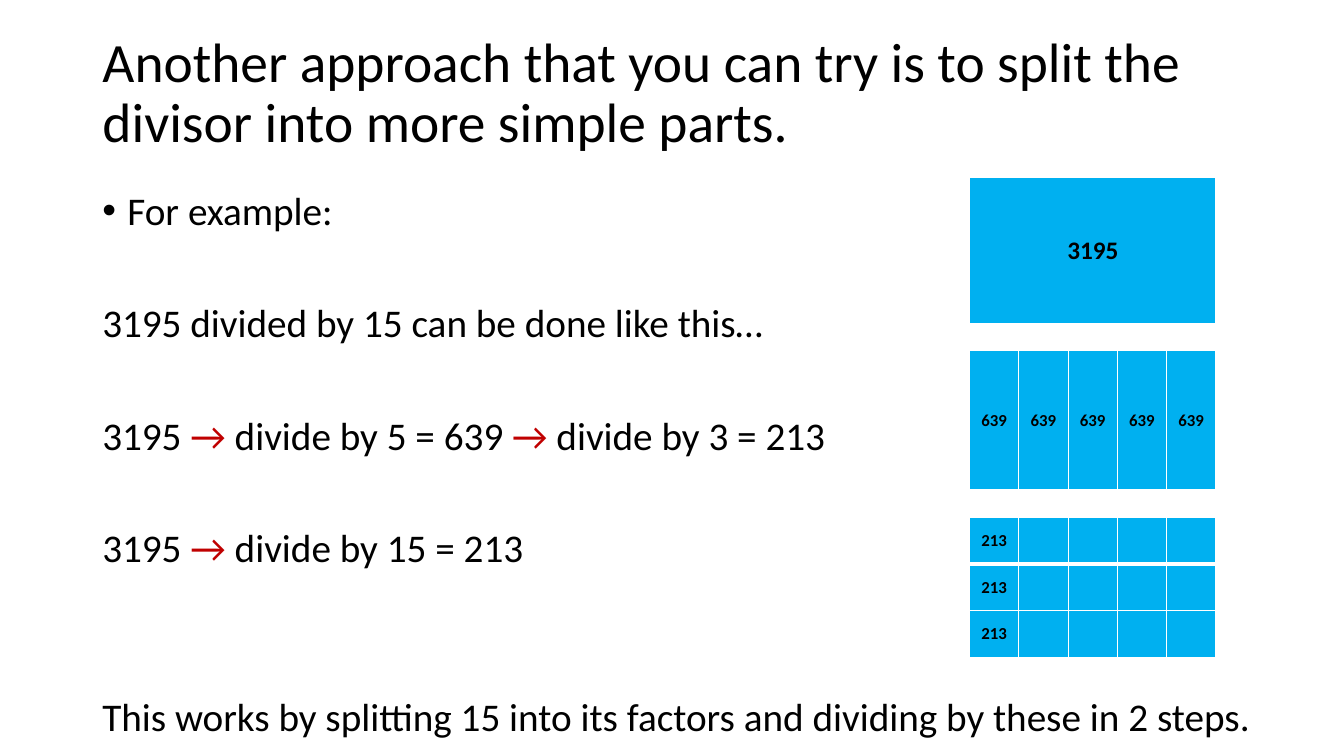
from lxml.etree import SubElement
from pptx import Presentation
from pptx.dml.color import RGBColor
from pptx.enum.text import MSO_ANCHOR, MSO_AUTO_SIZE, PP_ALIGN
from pptx.oxml.ns import qn
from pptx.util import Pt

# Content
FONT = "Calibri"
HUES = {"ink": "000000", "red": "C00000", "blue": "00B0F0", "white": "FFFFFF"}
TITLE = ("Another approach that you can try is to split the divisor "
         "into more simple parts.")
# Each line: space before, bullet, runs of (text, colour)
LINES = [
    (10, True, [("For example:", "ink")]),
    (50, False, [("3195 divided by 15 can be done like this…", "ink")]),
    (50, False, [("3195 ", "ink"), ("→", "red"), (" divide by 5 = 639", "ink"),
                 (" → ", "red"), ("divide by 3 = 213", "ink")]),
    (50, False, [("3195 ", "ink"), ("→", "red"), (" divide by 15 = 213", "ink")]),
    (90.5, False, [("This works by splitting 15 into its factors "
                    "and dividing by these in 2 steps.", "ink")]),
]
# Each grid: top, height, text size, rows
GRIDS = [
    (126.8, 105, 18, [["3195"]]),
    (250.6, 100, 12, [["639"] * 5]),
    (369.4, 100.2, 12, [["213"] + [""] * 4] * 3),
]
GRID_X, GRID_W = 692.6, 176


def color(name):
    return RGBColor.from_string(HUES[name])


def write(para, text, size=28, hue="ink", bold=False, align=PP_ALIGN.LEFT):
    para.alignment = align
    run = para.add_run()
    run.text = text
    font = run.font
    font.name, font.size, font.bold = FONT, Pt(size), bold
    font.color.rgb = color(hue)


def bullet(para):
    props = para._p.get_or_add_pPr()
    props.set("marL", str(Pt(18)))
    props.set("indent", str(Pt(-18)))
    SubElement(props, qn("a:buFont"), typeface="Arial")
    SubElement(props, qn("a:buChar"), char="•")


def border(cell, top, low):
    props = cell._tc.get_or_add_tcPr()
    for side, width in (("L", 1), ("R", 1), ("T", top), ("B", low)):
        line = SubElement(props, qn("a:ln" + side), w=str(Pt(width)))
        fill = SubElement(line, qn("a:solidFill"))
        SubElement(fill, qn("a:srgbClr"), val=HUES["white"])


def grid(slide, top, height, size, rows):
    count, span = len(rows), len(rows[0])
    table = slide.shapes.add_table(count, span, Pt(GRID_X), Pt(top),
                                   Pt(GRID_W), Pt(height)).table
    table.first_row = table.horz_banding = False
    for col in table.columns:
        col.width = Pt(GRID_W / span)
    for i, row in enumerate(rows):
        table.rows[i].height = Pt(height / count)
        for j, text in enumerate(row):
            cell = table.cell(i, j)
            # The first row has a heavy lower edge
            border(cell, 3 if i == 1 else 1, 3 if i == 0 else 1)
            cell.fill.solid()
            cell.fill.fore_color.rgb = color("blue")
            cell.vertical_anchor = MSO_ANCHOR.MIDDLE
            if text:
                write(cell.text_frame.paragraphs[0], text, size=size,
                      bold=True, align=PP_ALIGN.CENTER)


deck = Presentation()
deck.slide_width, deck.slide_height = Pt(960), Pt(540)
slide = deck.slides.add_slide(deck.slide_layouts[5])

# Title
title = slide.shapes.title
title.left, title.top, title.width, title.height = Pt(66), Pt(28.8), Pt(828), Pt(77)
frame = title.text_frame
frame.word_wrap = True
frame.auto_size = MSO_AUTO_SIZE.NONE
frame.vertical_anchor = MSO_ANCHOR.MIDDLE
frame.paragraphs[0].line_spacing = 0.9
write(frame.paragraphs[0], TITLE, size=39.6)

# Worked example
body = slide.shapes.add_textbox(Pt(66), Pt(133.2), Pt(852.5), Pt(401.8))
frame = body.text_frame
frame.word_wrap = True
for i, (gap, dot, runs) in enumerate(LINES):
    para = frame.add_paragraph() if i else frame.paragraphs[0]
    para.line_spacing, para.space_before = 0.9, Pt(gap)
    if dot:
        bullet(para)
    for text, hue in runs:
        write(para, text, hue=hue)

# Split blocks
for spot in GRIDS:
    grid(slide, *spot)

deck.save("out.pptx")
